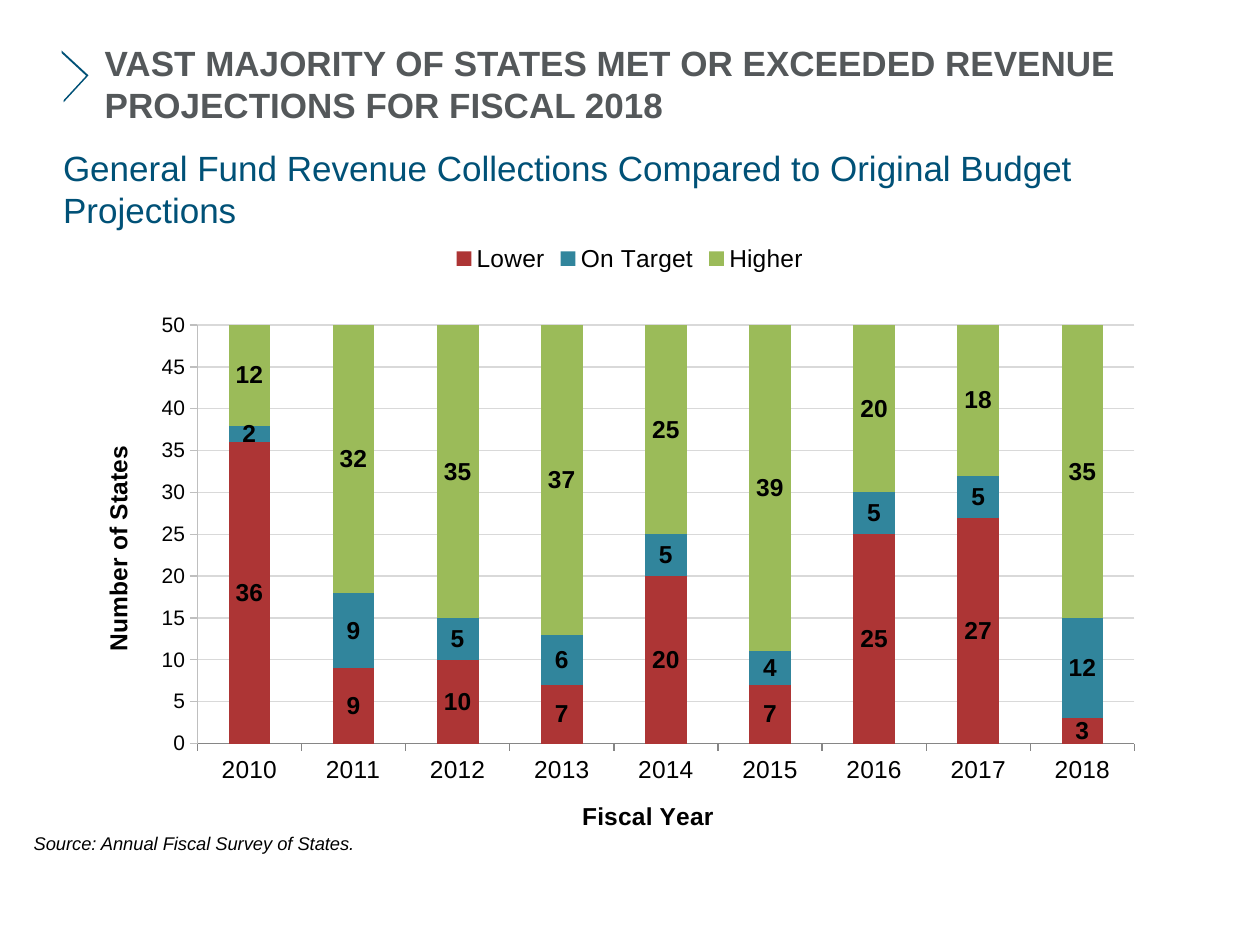
from lxml import etree
from pptx import Presentation
from pptx.chart.data import CategoryChartData
from pptx.dml.color import RGBColor
from pptx.enum.chart import XL_CHART_TYPE, XL_LABEL_POSITION, XL_LEGEND_POSITION, XL_TICK_MARK
from pptx.enum.shapes import MSO_SHAPE
from pptx.enum.text import MSO_ANCHOR, MSO_AUTO_SIZE, PP_ALIGN
from pptx.oxml.ns import qn
from pptx.util import Cm, Pt

STACKED = XL_CHART_TYPE.COLUMN_STACKED
CENTER = XL_LABEL_POSITION.CENTER
TOP = XL_LEGEND_POSITION.TOP
OUTSIDE = XL_TICK_MARK.OUTSIDE
HALF_FRAME = MSO_SHAPE.HALF_FRAME
BOTTOM = MSO_ANCHOR.BOTTOM
NO_FIT = MSO_AUTO_SIZE.NONE
LEFT = PP_ALIGN.LEFT


def color(hex_value):
    return RGBColor.from_string(hex_value)


def style(font, size, hex_value="000000", bold=False, italic=False):
    font.name = "Arial"
    font.size = Pt(size)
    font.bold = bold
    font.italic = italic
    font.color.rgb = color(hex_value)


prs = Presentation()
prs.slide_width = Cm(25.4)
prs.slide_height = Cm(19.05)
slide = prs.slides.add_slide(prs.slide_layouts[2])

chevron = slide.shapes.add_shape(HALF_FRAME, Cm(0.89), Cm(1.17), Cm(0.74), Cm(0.74))
chevron.rotation = 132.7
chevron.adjustments[0] = 0.04
chevron.adjustments[1] = 0.05
chevron.shadow.inherit = False
chevron.fill.solid()
chevron.fill.fore_color.rgb = color("005177")
chevron.line.fill.background()

headings = [
    (slide.shapes.title, "VAST MAJORITY OF STATES MET OR EXCEEDED REVENUE PROJECTIONS FOR FISCAL 2018",
     2.11, 1.14, 20.96, 1.4, "54585A", True),
    (slide.placeholders[1], "General Fund Revenue Collections Compared to Original Budget Projections",
     1.27, 3.38, 21.79, 1.27, "005177", False),
]
for heading, wording, left, top, width, height, hex_value, bold in headings:
    heading.left, heading.top = Cm(left), Cm(top)
    heading.width, heading.height = Cm(width), Cm(height)
    frame = heading.text_frame
    frame.text = wording
    frame.word_wrap = True
    frame.auto_size = NO_FIT
    frame.vertical_anchor = BOTTOM
    frame.margin_left = frame.margin_right = frame.margin_top = frame.margin_bottom = 0
    frame.paragraphs[0].alignment = LEFT
    style(frame.paragraphs[0].font, 20, hex_value, bold)

revenue_data = CategoryChartData()
revenue_data.categories = [str(year) for year in range(2010, 2019)]
outcomes = [
    ("Lower", (36, 9, 10, 7, 20, 7, 25, 27, 3), "AD3535"),
    ("On Target", (2, 9, 5, 6, 5, 4, 5, 5, 12), "31859C"),
    ("Higher", (12, 32, 35, 37, 25, 39, 20, 18, 35), "9BBB59"),
]
for outcome, states, _ in outcomes:
    revenue_data.add_series(outcome, states)

chart = slide.shapes.add_chart(STACKED, Cm(1.8), Cm(4.65), Cm(21.79), Cm(12.37), revenue_data).chart
style(chart.font, 16)
chart.has_title = False
chart.has_legend = True
chart.legend.position = TOP
chart.legend.include_in_layout = False
style(chart.legend.font, 14)

columns = chart.plots[0]
columns.vary_by_categories = False
columns.gap_width = 150
columns.overlap = 100
for series, (_, _, hex_value) in zip(columns.series, outcomes):
    series.format.fill.solid()
    series.format.fill.fore_color.rgb = color(hex_value)
    labels = series.data_labels
    labels.show_value = True
    labels.position = CENTER
    style(labels.font, 14, bold=True)

axes = [
    (chart.category_axis, "Fiscal Year", 14, "868686"),
    (chart.value_axis, "Number of States", 12, "BFBFBF"),
]
for axis, wording, size, line_color in axes:
    axis_title = axis.axis_title.text_frame
    axis_title.text = wording
    style(axis_title.paragraphs[0].font, 14, bold=True)
    style(axis.tick_labels.font, size)
    axis.major_tick_mark = OUTSIDE
    axis.format.line.color.rgb = color(line_color)
    axis.format.line.width = Pt(0.75)

states_axis = chart.value_axis
states_axis.minimum_scale = 0
states_axis.maximum_scale = 50
states_axis.major_unit = 5
states_axis.has_major_gridlines = True
states_axis.major_gridlines.format.line.color.rgb = color("D9D9D9")
states_axis.major_gridlines.format.line.width = Pt(0.75)

plot_area = columns._element.getparent()
for old_layout in plot_area.findall(qn("c:layout")):
    plot_area.remove(old_layout)
layout = etree.Element(qn("c:layout"))
plot_area.insert(0, layout)
manual = etree.SubElement(layout, qn("c:manualLayout"))
placement = [
    ("layoutTarget", "inner"), ("xMode", "edge"), ("yMode", "edge"),
    ("x", "0.1"), ("y", "0.154"), ("w", "0.867"), ("h", "0.682"),
]
for tag, value in placement:
    etree.SubElement(manual, qn(f"c:{tag}")).set("val", value)

source = slide.shapes.add_textbox(Cm(0.43), Cm(16.66), Cm(24.56), Cm(0.71)).text_frame
source.word_wrap = True
source.text = "Source: Annual Fiscal Survey of States."
style(source.paragraphs[0].font, 10.5, italic=True)

prs.save("out.pptx")
